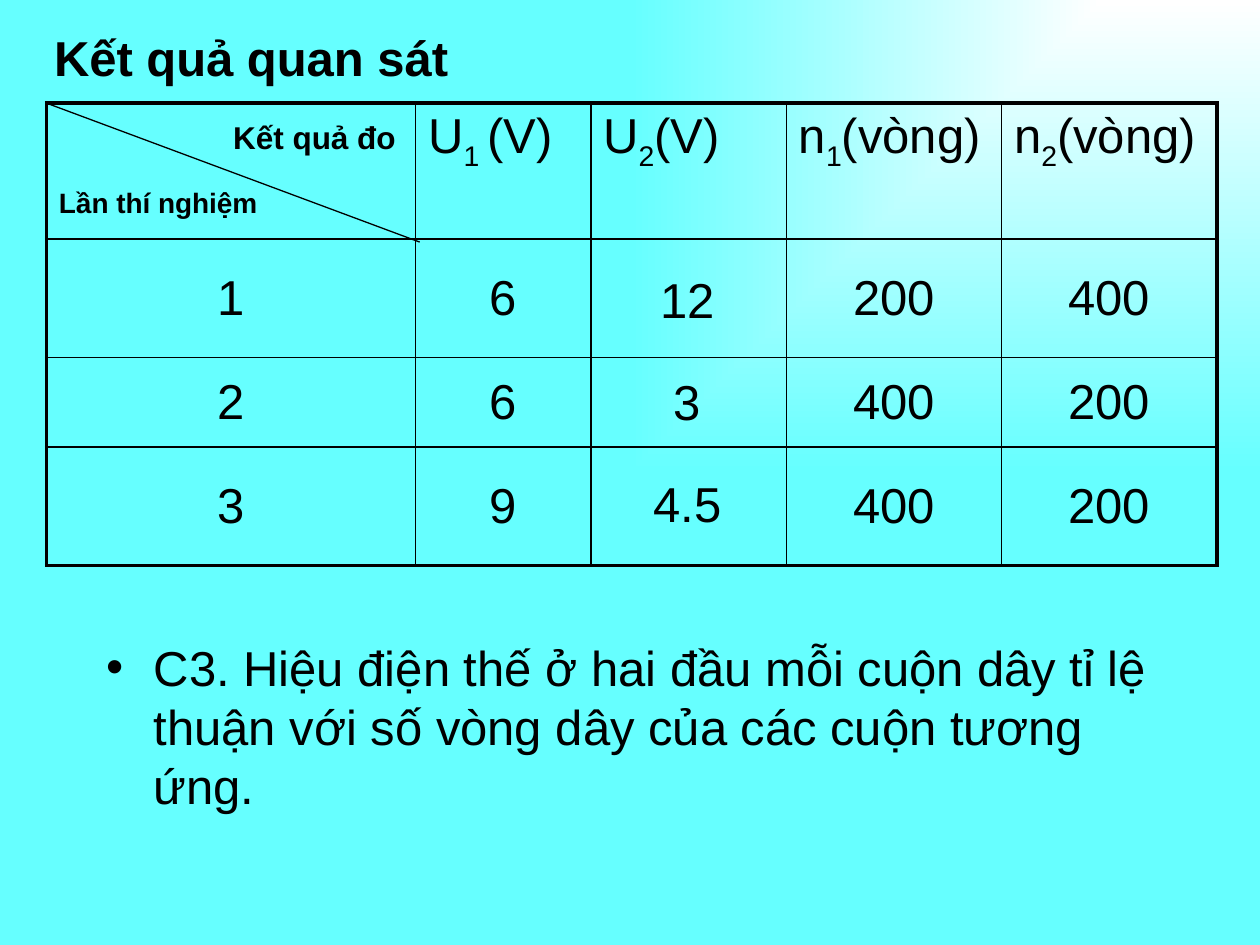
import pptx
import pptx.util
import pptx.dml.color
import pptx.enum.text
import pptx.oxml.ns
import lxml.etree

Cm = pptx.util.Cm
Pt = pptx.util.Pt
ALIGN = pptx.enum.text.PP_ALIGN
ANCHOR = pptx.enum.text.MSO_ANCHOR

COLORS = {"ink": "000000", "glow": "FFFFFF", "water": "66FFFF"}
FONT = "Arial"

TITLE = "Kết quả quan sát"
HEADERS = [
    [],
    ["U", ("1 ", -25), "(V)"],
    ["U", ("2", -25), "(V)"],
    ["n", ("1", -25), "(vòng)"],
    ["n", ("2", -25), "(vòng)"],
]
TRIALS = [
    ["1", "6", "", "200", "400"],
    ["2", "6", "", "400", "200"],
    ["3", "9", "", "400", "200"],
]
MEASURED_U2 = ["12", "3", "4.5"]
CORNER_LABELS = [
    ("Kết quả đo", 18, (4.45, 2.26, 4.24, 1.4)),
    ("Lần thí nghiệm", 16, (0.94, 3.61, 5.82, 1.27)),
]
CONCLUSION = ("C3. Hiệu điện thế ở hai đầu mỗi cuộn dây tỉ lệ thuận với "
              "số vòng dây của các cuộn tương ứng.")

LEFT, TOP = 0.94, 2.08
COLUMNS = [7.44, 3.53, 3.94, 4.34, 4.34]
ROWS = [2.74, 2.39, 1.8, 2.39]


def rgb(name):
    return pptx.dml.color.RGBColor.from_string(COLORS[name])


def add_xml(parent, tag, **attributes):
    return lxml.etree.SubElement(parent, pptx.oxml.ns.qn(tag), attributes)


def write(frame, pieces, size=28, bold=False, align=ALIGN.LEFT, bullet=None):
    paragraph = frame.paragraphs[0]
    paragraph.alignment = align
    if bullet:
        properties = paragraph._p.get_or_add_pPr()
        properties.set("marL", str(Cm(0.95)))
        properties.set("indent", str(-Cm(0.95)))
        add_xml(properties, "a:buFont", typeface=FONT)
        add_xml(properties, "a:buChar", char=bullet)
    for piece in pieces:
        words, baseline = (piece, 0) if isinstance(piece, str) else piece
        run = paragraph.add_run()
        run.text = words
        run.font.size = Pt(size)
        run.font.bold = bold
        run.font.name = FONT
        run.font.color.rgb = rgb("ink")
        if baseline:
            run._r.get_or_add_rPr().set("baseline", str(baseline * 1000))


def add_text(shapes, words, place, **style):
    frame = shapes.add_textbox(*map(Cm, place)).text_frame
    frame.word_wrap = True
    write(frame, [words], **style)


def set_borders(cell, widths):
    properties = cell._tc.get_or_add_tcPr()
    for side, width in widths.items():
        border = add_xml(properties, f"a:ln{side}", w=str(Pt(width)))
        fill = add_xml(border, "a:solidFill")
        add_xml(fill, "a:srgbClr", val=COLORS["ink"])


def paint_background(slide):
    fill = slide.background.fill
    fill.gradient()
    for stop, name in zip(fill.gradient_stops, ("glow", "water")):
        stop.color.rgb = rgb(name)
    linear = slide._element.find(".//" + pptx.oxml.ns.qn("a:lin"))
    gradient = linear.getparent()
    gradient.remove(linear)
    route = lxml.etree.Element(pptx.oxml.ns.qn("a:path"), {"path": "rect"})
    add_xml(route, "a:fillToRect", l="100000", b="100000")
    gradient.find(pptx.oxml.ns.qn("a:gsLst")).addnext(route)


def add_results(slide):
    results = slide.shapes.add_table(
        len(ROWS), len(COLUMNS), Cm(LEFT), Cm(TOP),
        Cm(sum(COLUMNS)), Cm(sum(ROWS))).table
    results.first_row = results.horz_banding = False
    for column, width in zip(results.columns, COLUMNS):
        column.width = Cm(width)
    for row, height in zip(results.rows, ROWS):
        row.height = Cm(height)
    last_row, last_column = len(ROWS) - 1, len(COLUMNS) - 1
    for r, values in enumerate([HEADERS] + TRIALS):
        for c, value in enumerate(values):
            cell = results.cell(r, c)
            outer = {"L": c == 0, "R": c == last_column,
                     "T": r == 0, "B": r == last_row}
            set_borders(cell, {side: 2.25 if edge else 1
                               for side, edge in outer.items()})
            cell.fill.background()
            if r:
                cell.vertical_anchor = ANCHOR.MIDDLE
            if value:
                write(cell.text_frame, value if r == 0 else [value],
                      align=ALIGN.CENTER if r else ALIGN.LEFT)


def add_corner(slide):
    corner = slide.shapes.add_group_shape().shapes
    diagonal = corner.add_connector(
        pptx.enum.shapes.MSO_CONNECTOR.STRAIGHT,
        Cm(LEFT), Cm(TOP), Cm(8.46), Cm(4.88))
    diagonal.line.color.rgb = rgb("ink")
    diagonal.line.width = Pt(0.75)
    add_xml(diagonal._element.spPr, "a:effectLst")
    for words, size, place in CORNER_LABELS:
        add_text(corner, words, place, size=size, bold=True)


def main():
    deck = pptx.Presentation()
    deck.slide_width, deck.slide_height = Cm(25.4), Cm(19.05)
    slide = deck.slides.add_slide(deck.slide_layouts[6])
    paint_background(slide)
    add_results(slide)
    add_corner(slide)
    add_text(slide.shapes, TITLE, (0.84, 0.43, 16.08, 1.45), bold=True)
    for i, voltage in enumerate(MEASURED_U2):
        add_text(slide.shapes, voltage, (12.27, 5.31 + 2.06 * i, 3.18, 1.45),
                 align=ALIGN.CENTER)
    add_text(slide.shapes, CONCLUSION, (1.9, 12.73, 21.59, 4.44), bullet="•")
    deck.save("out.pptx")


if __name__ == "__main__":
    import pptx.enum.shapes
    main()
